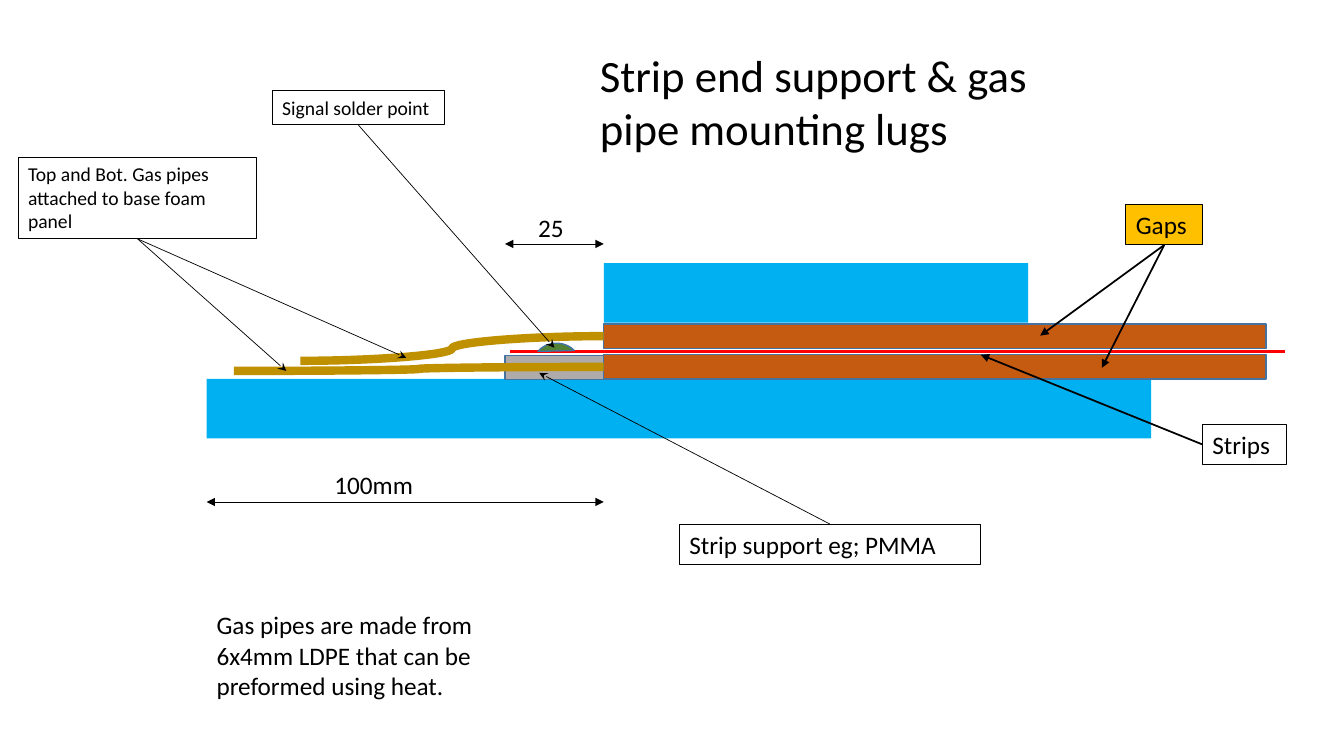
import pptx
import pptx.util
import pptx.dml.color
import pptx.enum.shapes
import pptx.enum.text
import pptx.oxml
import pptx.oxml.ns

SHAPE = pptx.enum.shapes.MSO_SHAPE
LINK = pptx.enum.shapes.MSO_CONNECTOR
BLACK, BLUE, EDGE = "000000", "00B0F0", "43739E"
COPPER, GREY, GOLD = "C55A11", "AFABAB", "BF9000"
TOP, LEFT, BOTTOM = 0, 1, 2


def cell(n):
    """Turn grid cells, ten to the inch, into a length."""
    return pptx.util.Inches(n / 10)


def place(box, x, y, w, h):
    """Place an area, in cells, relative to a box."""
    return [cell(n) for n in (box[0] + x, box[1] + y, w, h)]


def paint(part, color):
    part.solid()
    part.fore_color.rgb = pptx.dml.color.RGBColor.from_string(color)


def stroke(line, color, width):
    if color is None:
        line.fill.background()
        return
    paint(line.fill, color)
    line.width = pptx.util.Pt(width)


def block(slide, area, fill, edge=None, width=1, kind=SHAPE.RECTANGLE):
    shape = slide.shapes.add_shape(kind, *area)
    shape.shadow.inherit = False
    if fill:
        paint(shape.fill, fill)
    else:
        shape.fill.background()
    stroke(shape.line, edge, width)
    return shape


def write(shape, text, size):
    frame = shape.text_frame
    frame.text = text
    frame.word_wrap = True
    frame.auto_size = pptx.enum.text.MSO_AUTO_SIZE.NONE
    frame.vertical_anchor = pptx.enum.text.MSO_ANCHOR.TOP
    para = frame.paragraphs[0]
    para.alignment = pptx.enum.text.PP_ALIGN.LEFT
    font = para.runs[0].font
    font.name, font.size = "Calibri", pptx.util.Pt(size)
    font.color.rgb = pptx.dml.color.RGBColor.from_string(BLACK)


def note(slide, area, text):
    write(slide.shapes.add_textbox(*area), text, 18)


def join(slide, box, start, end, color, width, head=None, tail=None,
         kind=LINK.STRAIGHT):
    """Draw a line; start is a point in the box or a (shape, side) pair."""
    glued = not isinstance(start[0], (int, float))
    first = end if glued else start
    points = [cell(box[i] + p[i]) for p in (first, end) for i in (0, 1)]
    link = slide.shapes.add_connector(kind, *points)
    if glued:
        link.begin_connect(*start)
    stroke(link.line, color, width)
    ln = link.line._get_or_add_ln()
    for tag, style in (("a:headEnd", head), ("a:tailEnd", tail)):
        if style:
            tip = pptx.oxml.parse_xml(
                f"<{tag} {pptx.oxml.ns.nsdecls('a')} type='{style}'/>")
            ln.append(tip)
    link._element.spPr.append(pptx.oxml.parse_xml(
        f"<a:effectLst {pptx.oxml.ns.nsdecls('a')}/>"))


def title(slide, box):
    shape = slide.shapes.title
    shape.left, shape.top, shape.width, shape.height = place((0, 0), *box)
    write(shape, "Strip end support & gas pipe mounting lugs", 32)


def section(slide, box):
    """Draw the cut through foam, strips, support and pipes."""
    edge = 39.4
    block(slide, place(box, edge, 0, 42.1, 5.9), BLUE)
    block(slide, place(box, 0, 11.5, 93.7, 5.9), BLUE)
    upper = block(slide, place(box, edge, 6.05, 65.7, 2.4), COPPER, EDGE)
    block(slide, place(box, 29.6, 9.15, 9.8, 2.4), GREY, EDGE)
    lower = block(slide, place(box, edge, 9.1, 65.7, 2.4), COPPER, EDGE)
    join(slide, box, (30.1, 8.8), (107, 8.8), "FF0000", 2)
    for strip, end in ((upper, (9.3, 9.7)), (lower, (2.7, 10.7))):
        join(slide, box, (strip, LEFT), end, GOLD, 6, kind=LINK.CURVE)
    solder = block(slide, place(box, 32.8, 7.6, 3.8, 4.5), "548235", EDGE,
                   kind=SHAPE.CHORD)
    solder.rotation = 90
    solder.adjustments[0], solder.adjustments[1] = 72.35, 141.79


def sizes(slide, box):
    for x, y, width, text, area in (
            (0, 23.7, 39.4, "100mm", (11.7, 20, 12.4, 4)),
            (29.6, -1.9, 9.8, "25", (31.9, -5.5, 5.2, 4))):
        join(slide, box, (x, y), (x + width, y), BLACK, 0.5,
             "triangle", "triangle")
        note(slide, place(box, *area), text)


def labels(slide, box):
    """Add framed labels with arrows to the points they name."""
    for text, area, size, fill, side, width, tip, ends in (
            ("Strip support eg; PMMA", (46.9, 25.9, 29.9, 4), 18, None,
             TOP, 0.5, "stealth", [(33, 10.9)]),
            ("Top and Bot. Gas pipes attached to base foam panel",
             (-18.7, -10.5, 23.7, 8.1), 14, None,
             BOTTOM, 0.5, "stealth", [(19.8, 9.4), (7.9, 10.7)]),
            ("Gaps", (91.2, -5.8, 7.6, 4), 18, "FFC000",
             BOTTOM, 1.25, "triangle", [(88.8, 10.4), (82.7, 7.2)]),
            ("Strips", (98.8, 16, 8.3, 4), 18, None,
             LEFT, 1.25, "triangle", [(76.8, 9.1)]),
            ("Signal solder point", (6.5, -17.1, 17.1, 3.4), 14, None,
             BOTTOM, 0.5, "stealth", [(34.5, 8.4)])):
        frame = block(slide, place(box, *area), fill, BLACK, 0.75)
        write(frame, text, size)
        for end in ends:
            join(slide, box, (frame, side), end, BLACK, width, tail=tip)


def main():
    deck = pptx.Presentation()
    deck.slide_width, deck.slide_height = cell(133.33), cell(75)
    slide = deck.slides.add_slide(deck.slide_layouts[5])
    cut = (20.5, 26.1)
    title(slide, (58.5, 4.2, 49.9, 11.8))
    for draw in (section, sizes, labels):
        draw(slide, cut)
    note(slide, place((0, 0), 20.5, 60, 32.9, 10.1),
         "Gas pipes are made from 6x4mm LDPE that can be preformed "
         "using heat.")
    deck.save("out.pptx")


if __name__ == "__main__":
    main()
